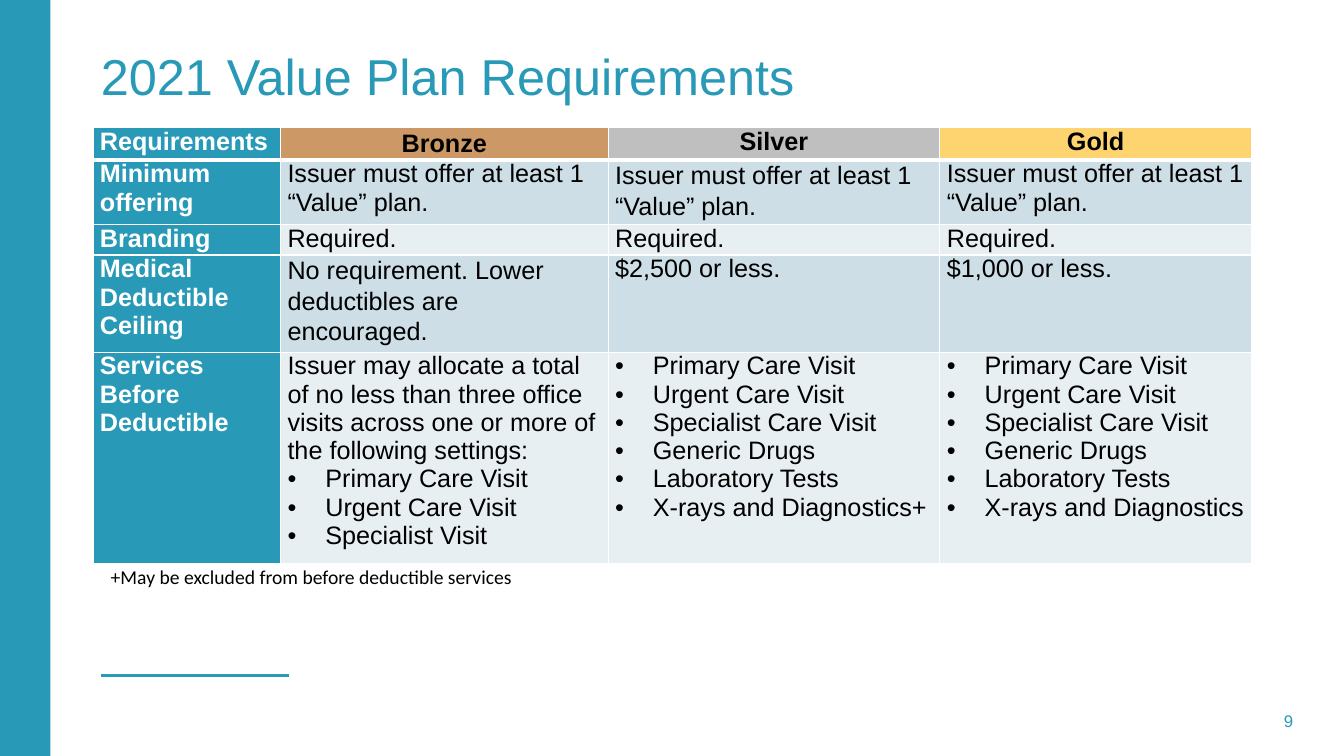
import pptx
import pptx.util
import pptx.dml.color
import pptx.enum.shapes
import pptx.enum.text
import pptx.oxml
import pptx.oxml.ns
from pptx.util import Pt

ALIGN = pptx.enum.text.PP_ALIGN
ANCHOR = pptx.enum.text.MSO_ANCHOR
NAMESPACE = pptx.oxml.ns.nsdecls("a")
TEAL = "2899B7"
WHITE = "FFFFFF"
BLACK = "000000"
BAND_FILLS = ["CDDEE6", "E8EFF3"]
HEADER_FILLS = [TEAL, "CC9966", "BFBFBF", "FED471"]
COLUMN_WIDTHS = [134, 234, 237, 222.5]
ROW_HEIGHTS = [22, 43, 20, 65, 141]
BULLET = "• "
LOOSE = 1.07
LOOSE_CELLS = {(0, 1), (1, 2), (3, 1)}

OFFER = "Issuer must offer at least 1 “Value” plan."
SERVICES = [
    "• Primary Care Visit",
    "• Urgent Care Visit",
    "• Specialist Care Visit",
    "• Generic Drugs",
    "• Laboratory Tests",
]
BRONZE_SERVICES = [
    "Issuer may allocate a total of no less than three office visits "
    "across one or more of the following settings:",
    "• Primary Care Visit",
    "• Urgent Care Visit",
    "• Specialist Visit",
]
REQUIREMENTS = [
    [["Requirements"], ["Bronze"], ["Silver"], ["Gold"]],
    [["Minimum offering"], [OFFER], [OFFER], [OFFER]],
    [["Branding"], ["Required."], ["Required."], ["Required."]],
    [
        ["Medical Deductible Ceiling"],
        ["No requirement. Lower deductibles are encouraged."],
        ["$2,500 or less."],
        ["$1,000 or less."],
    ],
    [
        ["Services Before Deductible"],
        BRONZE_SERVICES,
        SERVICES + ["• X-rays and Diagnostics+"],
        SERVICES + ["• X-rays and Diagnostics"],
    ],
]


def color(value):
    return pptx.dml.color.RGBColor.from_string(value)


def style_paragraph(paragraph, size, value, font="Arial", bold=False,
                    align=ALIGN.LEFT, spacing=1.0):
    paragraph.alignment = align
    paragraph.line_spacing = spacing
    for run in paragraph.runs:
        run.font.name = font
        run.font.size = Pt(size)
        run.font.bold = bold
        run.font.color.rgb = color(value)


def add_text(slide, box, text, size, value, anchor=ANCHOR.TOP, insets=(0, 0), **style):
    shape = slide.shapes.add_textbox(*map(Pt, box))
    frame = shape.text_frame
    frame.word_wrap = True
    frame.vertical_anchor = anchor
    frame.margin_left = frame.margin_right = Pt(insets[0])
    frame.margin_top = frame.margin_bottom = Pt(insets[1])
    frame.text = text
    style_paragraph(frame.paragraphs[0], size, value, **style)


def add_side_band(slide):
    band = slide.shapes.add_shape(
        pptx.enum.shapes.MSO_SHAPE.RECTANGLE, Pt(0), Pt(0), Pt(36), Pt(540))
    band.shadow.inherit = False
    band.fill.solid()
    band.fill.fore_color.rgb = color(TEAL)
    band.line.fill.background()


def add_footer_rule(slide):
    rule = slide.shapes.add_connector(
        pptx.enum.shapes.MSO_CONNECTOR.STRAIGHT, Pt(72), Pt(482.4), Pt(206.4), Pt(482.4))
    rule.line.color.rgb = color(TEAL)
    rule.line.width = Pt(2)
    rule._element.spPr.append(pptx.oxml.parse_xml(f"<a:effectLst {NAMESPACE}/>"))


def set_borders(cell, bottom):
    properties = cell._tc.get_or_add_tcPr()
    for side, width in [("L", 1), ("R", 1), ("T", 1), ("B", bottom)]:
        properties.append(pptx.oxml.parse_xml(
            f'<a:ln{side} {NAMESPACE} w="{Pt(width)}"><a:solidFill>'
            f'<a:srgbClr val="{WHITE}"/></a:solidFill></a:ln{side}>'))


def add_bullet(paragraph):
    properties = paragraph._p.get_or_add_pPr()
    properties.set("marL", str(Pt(27)))
    properties.set("indent", str(-Pt(27)))
    properties.append(pptx.oxml.parse_xml(
        f'<a:buFont {NAMESPACE} typeface="Arial"/>'))
    properties.append(pptx.oxml.parse_xml(f'<a:buChar {NAMESPACE} char="•"/>'))


def fill_cell(cell, lines, fill, bottom, **style):
    set_borders(cell, bottom)
    cell.fill.solid()
    cell.fill.fore_color.rgb = color(fill)
    cell.margin_left = cell.margin_right = Pt(5)
    cell.margin_top = cell.margin_bottom = Pt(0)
    cell.text_frame.text = "\n".join(line.removeprefix(BULLET) for line in lines)
    for paragraph, line in zip(cell.text_frame.paragraphs, lines):
        if line.startswith(BULLET):
            add_bullet(paragraph)
        style_paragraph(paragraph, 18, **style)


def add_requirements_table(slide):
    table = slide.shapes.add_table(
        len(ROW_HEIGHTS), len(COLUMN_WIDTHS), Pt(66.4), Pt(91.2),
        Pt(sum(COLUMN_WIDTHS)), Pt(sum(ROW_HEIGHTS))).table
    for column, width in zip(table.columns, COLUMN_WIDTHS):
        column.width = Pt(width)
    for row, height in zip(table.rows, ROW_HEIGHTS):
        row.height = Pt(height)
    for i, row in enumerate(REQUIREMENTS):
        for j, lines in enumerate(row):
            header, label = i == 0, j == 0
            if header:
                fill = HEADER_FILLS[j]
            else:
                fill = TEAL if label else BAND_FILLS[(i - 1) % 2]
            fill_cell(
                table.cell(i, j), lines, fill,
                bottom=3 if header else 1,
                value=WHITE if label else BLACK,
                bold=header or label,
                align=ALIGN.CENTER if header and not label else ALIGN.LEFT,
                spacing=LOOSE if (i, j) in LOOSE_CELLS else 1.0)


def main():
    presentation = pptx.Presentation()
    presentation.slide_width = Pt(960)
    presentation.slide_height = Pt(540)
    slide = presentation.slides.add_slide(presentation.slide_layouts[6])
    add_footer_rule(slide)
    add_side_band(slide)
    add_text(slide, (72, 28.8, 852, 47.5), "2021 Value Plan Requirements", 36, TEAL,
             anchor=ANCHOR.BOTTOM, spacing=0.9)
    add_requirements_table(slide)
    add_text(slide, (678, 500.4, 245.8, 28.8), "9", 12, TEAL,
             anchor=ANCHOR.MIDDLE, align=ALIGN.RIGHT)
    add_text(slide, (72, 399, 800, 24.5), "+May be excluded from before deductible services",
             14, BLACK, insets=(7.2, 3.6), font="Calibri", spacing=LOOSE)
    presentation.save("out.pptx")


if __name__ == "__main__":
    main()
